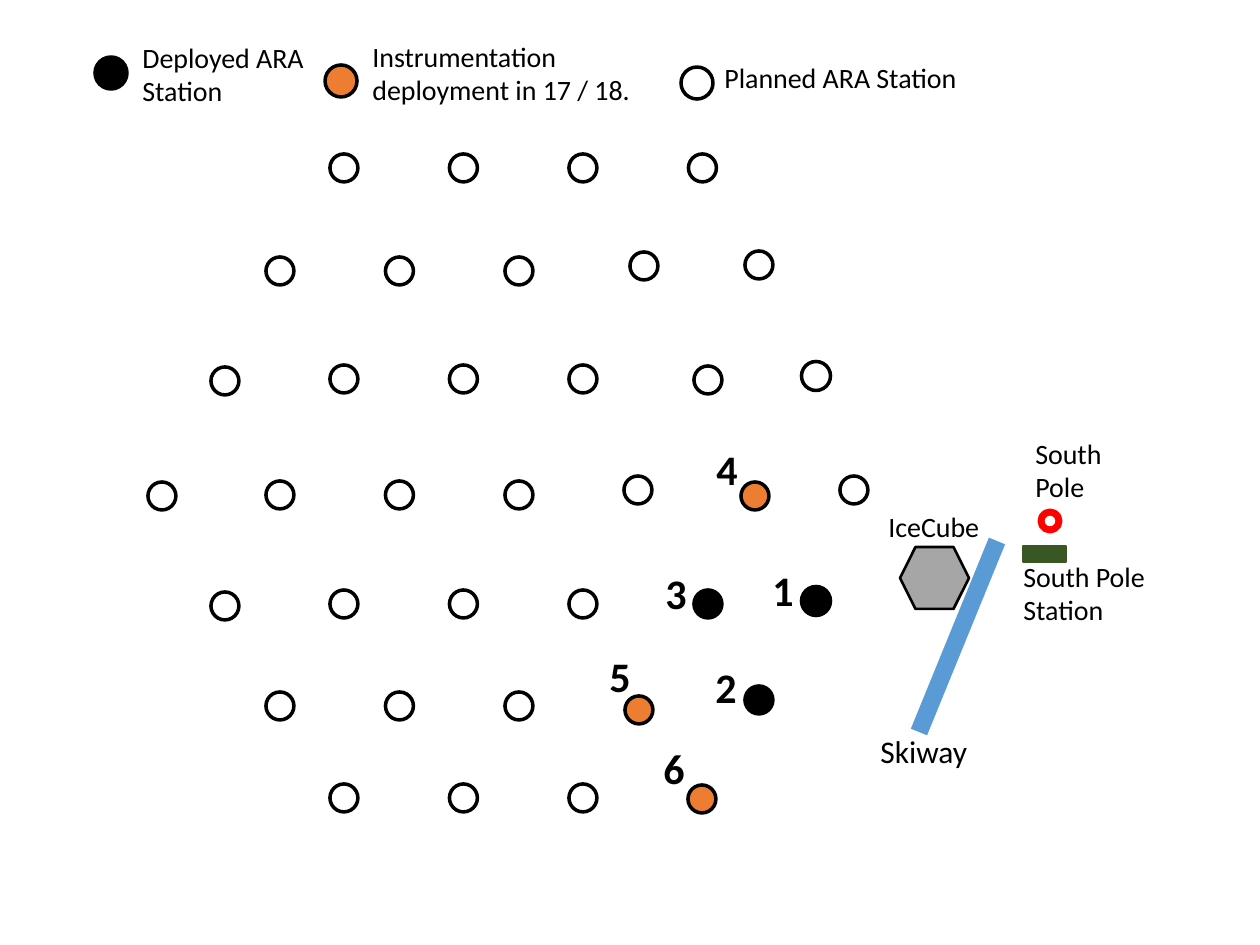
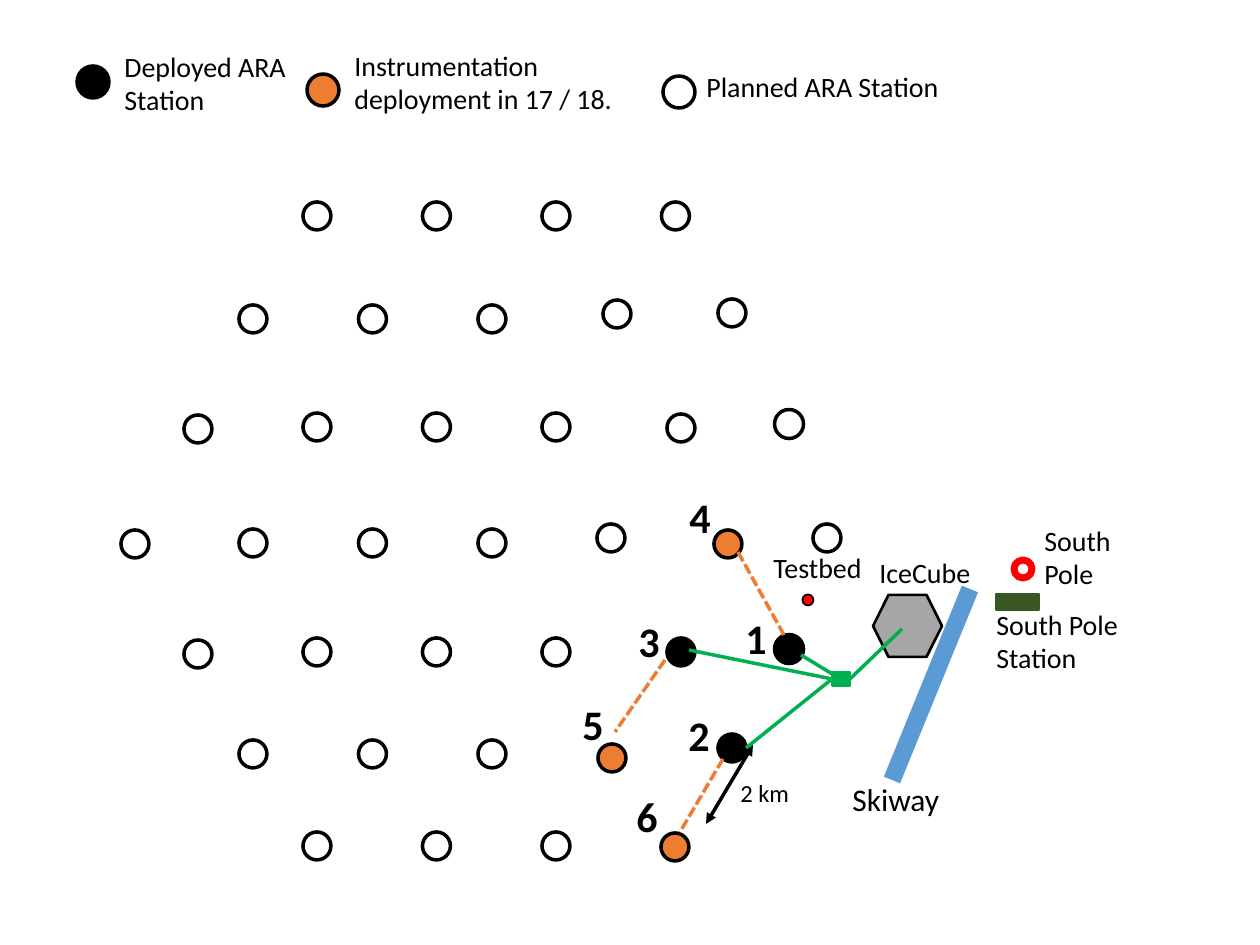
from dataclasses import dataclass

from lxml.etree import SubElement
from pptx import Presentation
from pptx.dml.color import RGBColor
from pptx.enum.dml import MSO_LINE
from pptx.enum.shapes import MSO_CONNECTOR as CONNECTOR, MSO_SHAPE as SHAPE
from pptx.oxml.ns import qn
from pptx.util import Pt

PX = 914400 / 126
SLIDE_SIZE = (1260, 945)


@dataclass(frozen=True)
class Theme:
    font: str = "Calibri"
    black: str = "000000"
    white: str = "FFFFFF"
    orange: str = "ED7D31"
    link: str = "ED7D33"
    grey: str = "A6A6A6"
    blue: str = "5B9BD5"
    dark_green: str = "385723"
    green: str = "00B050"
    red: str = "FF0000"
    small: int = 14
    body: int = 16
    large: int = 18
    number: int = 24


THEME = Theme()

# Station fields, relative to the map: first centre, y, count, colour, diameter
PITCH = 119.5
PLANNED, DEPLOYED, UPCOMING = THEME.white, THEME.black, THEME.orange
STATION_RUNS = [
    (197, 15, 4),
    (133, 118, 3), (497, 113, 1), (612, 112, 1),
    (78, 228, 1), (197, 226, 3), (561, 227, 1), (669, 223, 1, PLANNED, 29),
    (15, 343, 1), (133, 342, 3), (491, 337, 1), (608, 343, 1, UPCOMING),
    (707, 337, 1),
    (78, 453, 1), (197, 451, 3), (561, 451, 1, DEPLOYED),
    (669, 448, 1, DEPLOYED, 29),
    (133, 553, 3), (492, 557, 1, UPCOMING), (612, 547, 1, DEPLOYED),
    (197, 645, 3), (555, 646, 1, UPCOMING),
]
STATION_NUMBERS = {
    "1": (613, 405), "2": (556, 502), "3": (506, 408),
    "4": (557, 284), "5": (450, 491), "6": (504, 583),
}

# Legend entries: dot centre, colour, wording, text box
LEGEND = [
    ((15, 40), DEPLOYED, "Deployed ARA Station", (34, 1, 227, 81)),
    ((245, 48), UPCOMING, "Instrumentation deployment in 17 / 18.",
     (264, 0, 319, 81)),
    ((601, 50), PLANNED, "Planned ARA Station", (616, 21, 319, 47)),
]

# Label boxes that differ between the two site maps
PLAIN_LABELS = {
    "IceCube": (729, 350, 164, 47),
    "South Pole": (876, 277, 137, 81),
    "South Pole Station": (864, 400, 184, 81),
    "Skiway": (721, 573, 155, 50),
}
CABLED_LABELS = {
    "IceCube": (747, 348, 130, 47),
    "South Pole": (912, 316, 105, 81),
    "South Pole Station": (864, 400, 170, 81),
    "Skiway": (720, 573, 122, 46),
    "Testbed": (641, 343, 123, 47),
}

# Dashed routes between deployed and upcoming stations
EXTENSIONS = [
    ((545, 459), (495, 531)),
    ((618, 351), (664, 434)),
    ((603, 558), (560, 631)),
]


def emu(*lengths):
    return [round(length * PX) for length in lengths]


def rgb(color):
    return RGBColor.from_string(color)


def shift(origin, point):
    return origin[0] + point[0], origin[1] + point[1]


def add_text(slide, origin, box, text, size=THEME.body, bold=False):
    left, top = shift(origin, box[:2])
    frame = slide.shapes.add_textbox(*emu(left, top, *box[2:])).text_frame
    frame.word_wrap = True
    run = frame.paragraphs[0].add_run()
    run.text = text
    run.font.name = THEME.font
    run.font.size = Pt(size)
    run.font.bold = bold
    run.font.color.rgb = rgb(THEME.black)


def add_figure(slide, origin, kind, box, fill, line=THEME.black, width=2):
    left, top = shift(origin, box[:2])
    figure = slide.shapes.add_shape(kind, *emu(left, top, *box[2:]))
    figure.shadow.inherit = False
    if fill:
        figure.fill.solid()
        figure.fill.fore_color.rgb = rgb(fill)
    else:
        figure.fill.background()
    figure.line.color.rgb = rgb(line)
    figure.line.width = Pt(width)
    return figure


def add_dot(slide, origin, center, diameter, fill, **outline):
    x, y = center
    box = (x - diameter / 2, y - diameter / 2, diameter, diameter)
    add_figure(slide, origin, SHAPE.OVAL, box, fill, **outline)


def add_line(slide, origin, start, end, color, width=2, dash=None, arrows=False):
    line = slide.shapes.add_connector(
        CONNECTOR.STRAIGHT, *emu(*shift(origin, start), *shift(origin, end)))
    line.line.color.rgb = rgb(color)
    line.line.width = Pt(width)
    if dash:
        line.line.dash_style = dash
    if arrows:
        for tip in ("a:headEnd", "a:tailEnd"):
            SubElement(line.line._get_or_add_ln(), qn(tip), type="triangle")
    SubElement(line._element.spPr, qn("a:effectLst"))
    return line


def draw_legend(slide, origin):
    for center, color, wording, box in LEGEND:
        add_dot(slide, origin, center, 32, color)
        add_text(slide, origin, box, wording)


def draw_stations(slide, origin):
    def draw_run(x, y, count, color=PLANNED, diameter=28):
        for column in range(count):
            add_dot(slide, origin, (x + column * PITCH, y), diameter, color)

    for run in STATION_RUNS:
        draw_run(*run)
    for number, corner in STATION_NUMBERS.items():
        add_text(slide, origin, (*corner, 43, 55), number,
                 size=THEME.number, bold=True)


def draw_pole_site(slide, origin, labels):
    # Skiway, detector, station building and pole marker
    add_line(slide, origin, (850, 388), (772, 579), THEME.blue, width=10)
    add_figure(slide, origin, SHAPE.HEXAGON, (753, 394, 69, 62), THEME.grey,
               width=1.5)
    add_figure(slide, origin, SHAPE.RECTANGLE, (876, 393, 43, 16),
               THEME.dark_green, line=THEME.dark_green, width=1)
    add_dot(slide, origin, (903, 368), 18, None, line=THEME.red, width=4)
    for wording, box in labels.items():
        size = THEME.large if wording == "Skiway" else THEME.body
        add_text(slide, origin, box, wording, size=size)


def draw_distance(slide, origin):
    add_line(slide, origin, (586, 623), (633, 544), THEME.black, arrows=True)
    add_text(slide, origin, (608, 571, 126, 43), "2 km", size=THEME.small)


def draw_cables(slide, origin):
    add_dot(slide, origin, (688, 399), 11, THEME.red, width=1)
    junction = add_figure(slide, origin, SHAPE.RECTANGLE, (712, 471, 18, 14),
                          THEME.green, line=THEME.green, width=1)
    # Cables from the junction to the detector and to stations 1, 3 and 2
    to_detector = add_line(slide, origin, (782, 428), (730, 478), THEME.green)
    to_detector.end_connect(junction, 3)
    add_line(slide, origin, (714, 474), (681, 454), THEME.green)
    for station_end in ((569, 449), (626, 547)):
        cable = add_line(slide, origin, (712, 478), station_end, THEME.green)
        cable.begin_connect(junction, 1)
    for start, end in EXTENSIONS:
        add_line(slide, origin, start, end, THEME.link,
                 dash=MSO_LINE.SQUARE_DOT)


def build_map(deck, legend_at, map_at, labels, cabled=False):
    slide = deck.slides.add_slide(deck.slide_layouts[6])
    if cabled:
        draw_distance(slide, map_at)
    draw_stations(slide, map_at)
    draw_pole_site(slide, map_at, labels)
    if cabled:
        draw_cables(slide, map_at)
    draw_legend(slide, legend_at)


def main():
    deck = Presentation()
    deck.slide_width, deck.slide_height = emu(*SLIDE_SIZE)
    build_map(deck, (96, 33), (147, 153), PLAIN_LABELS)
    build_map(deck, (78, 42), (120, 201), CABLED_LABELS, cabled=True)
    deck.save("out.pptx")


if __name__ == "__main__":
    main()
